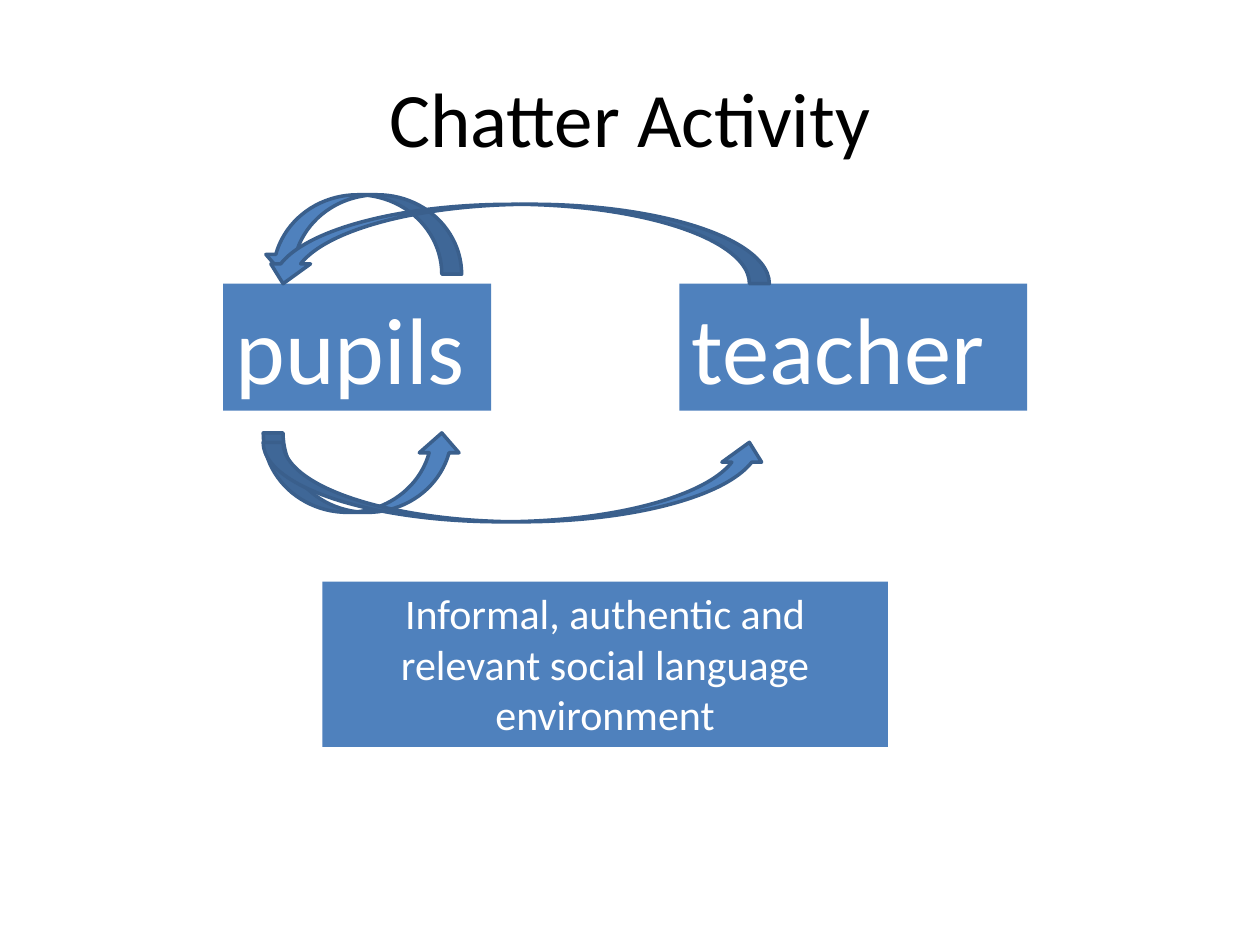
from pptx import Presentation
from pptx.dml.color import RGBColor
from pptx.enum.shapes import MSO_SHAPE
from pptx.enum.text import MSO_ANCHOR, MSO_AUTO_SIZE, PP_ALIGN
from pptx.util import Pt

RECTANGLE = MSO_SHAPE.RECTANGLE
CURVED_ARROW = MSO_SHAPE.CURVED_UP_ARROW
LEFT, CENTER = PP_ALIGN.LEFT, PP_ALIGN.CENTER
TOP, MIDDLE = MSO_ANCHOR.TOP, MSO_ANCHOR.MIDDLE
FIT_SHAPE = MSO_AUTO_SIZE.SHAPE_TO_FIT_TEXT

BLUE = RGBColor(0x4F, 0x81, 0xBD)
DARK_BLUE = RGBColor(0x3A, 0x5F, 0x8C)
WHITE = RGBColor(0xFF, 0xFF, 0xFF)
BLACK = RGBColor(0x00, 0x00, 0x00)
FONT = "Calibri"

TITLE = "Chatter Activity"
BOXES = [
    ("pupils", (127.5, 162, 153.2, 72.7), 54, LEFT),
    ("teacher", (388.3, 162, 198.7, 72.7), 54, LEFT),
    ("Informal, authentic and relevant social language environment",
     (184.2, 332.4, 323.2, 94.5), 24, CENTER),
]
ARROW_LEFT, ARROW_HEIGHT = 150.4, 45.4
PUPIL_SPAN, TEACHER_SPAN = 113.4, 289.2
ARROWS = [
    (247.4, PUPIL_SPAN, 0),
    (252.8, TEACHER_SPAN, 0),
    (111.3, PUPIL_SPAN, 180),
    (116.7, TEACHER_SPAN, 180),
]


def write(shape, text, size, color, align, anchor):
    frame = shape.text_frame
    frame.text = text
    frame.word_wrap = True
    frame.vertical_anchor = anchor
    para = frame.paragraphs[0]
    para.alignment = align
    font = para.runs[0].font
    font.name, font.size = FONT, Pt(size)
    font.color.rgb = color


def add_blue_shape(slide, kind, place):
    shape = slide.shapes.add_shape(kind, *map(Pt, place))
    shape.shadow.inherit = False
    shape.fill.solid()
    shape.fill.fore_color.rgb = BLUE
    return shape


def add_box(slide, text, place, size, align):
    box = add_blue_shape(slide, RECTANGLE, place)
    box.line.fill.background()
    write(box, text, size, WHITE, align, TOP)
    box.text_frame.auto_size = FIT_SHAPE


def add_arrow(slide, top, width, rotation):
    arrow = add_blue_shape(slide, CURVED_ARROW, (ARROW_LEFT, top, width, ARROW_HEIGHT))
    arrow.line.color.rgb = DARK_BLUE
    arrow.line.width = Pt(2)
    arrow.rotation = rotation


def main():
    deck = Presentation()
    deck.slide_width, deck.slide_height = Pt(720), Pt(540)
    slide = deck.slides.add_slide(deck.slide_layouts[5])

    title = slide.shapes.title
    title.left, title.top, title.width, title.height = map(Pt, (36, 21.6, 648, 90))
    write(title, TITLE, 44, BLACK, CENTER, MIDDLE)

    *people, environment = BOXES
    for person in people:
        add_box(slide, *person)
    for arrow in ARROWS:
        add_arrow(slide, *arrow)
    add_box(slide, *environment)

    deck.save("out.pptx")


if __name__ == "__main__":
    main()
